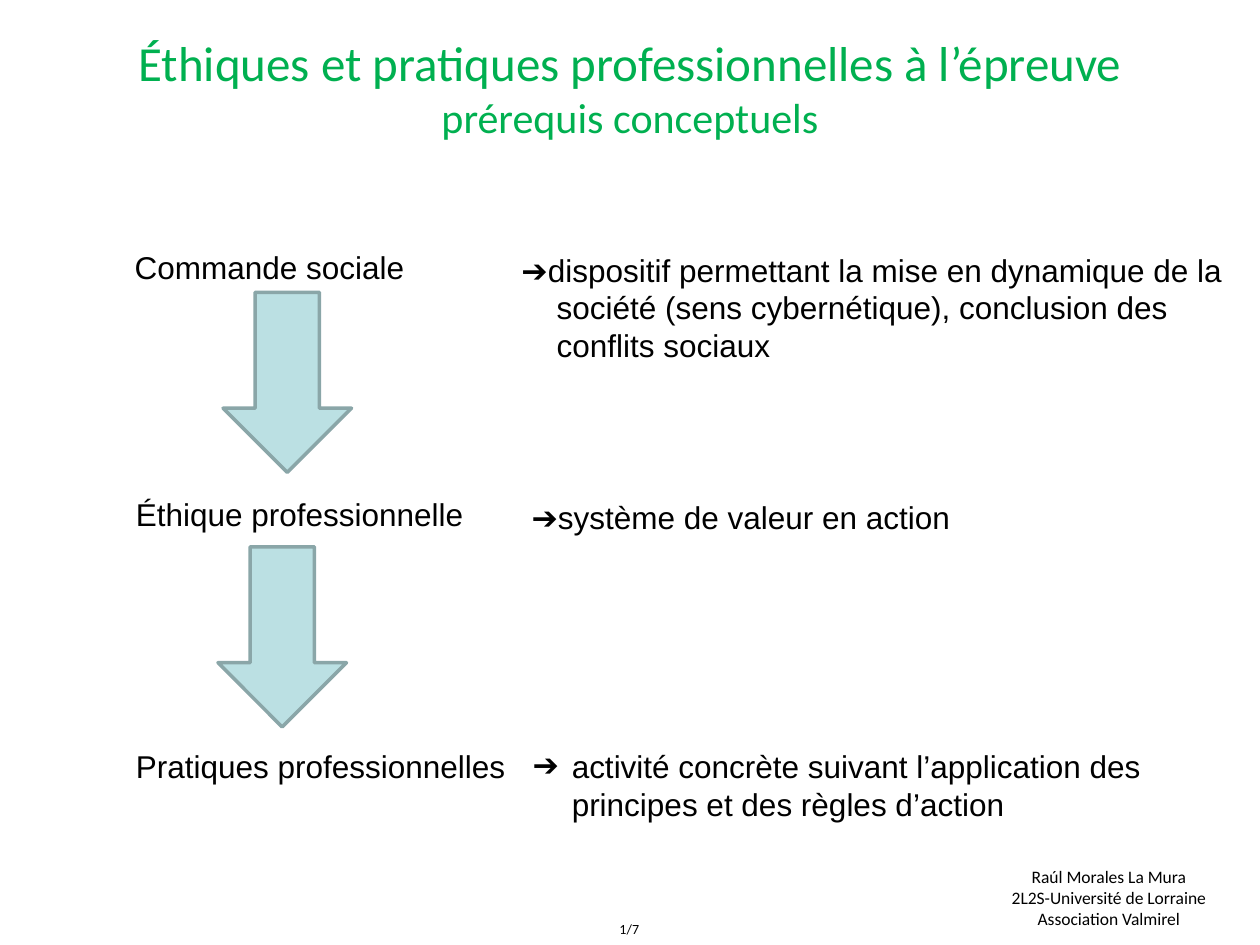
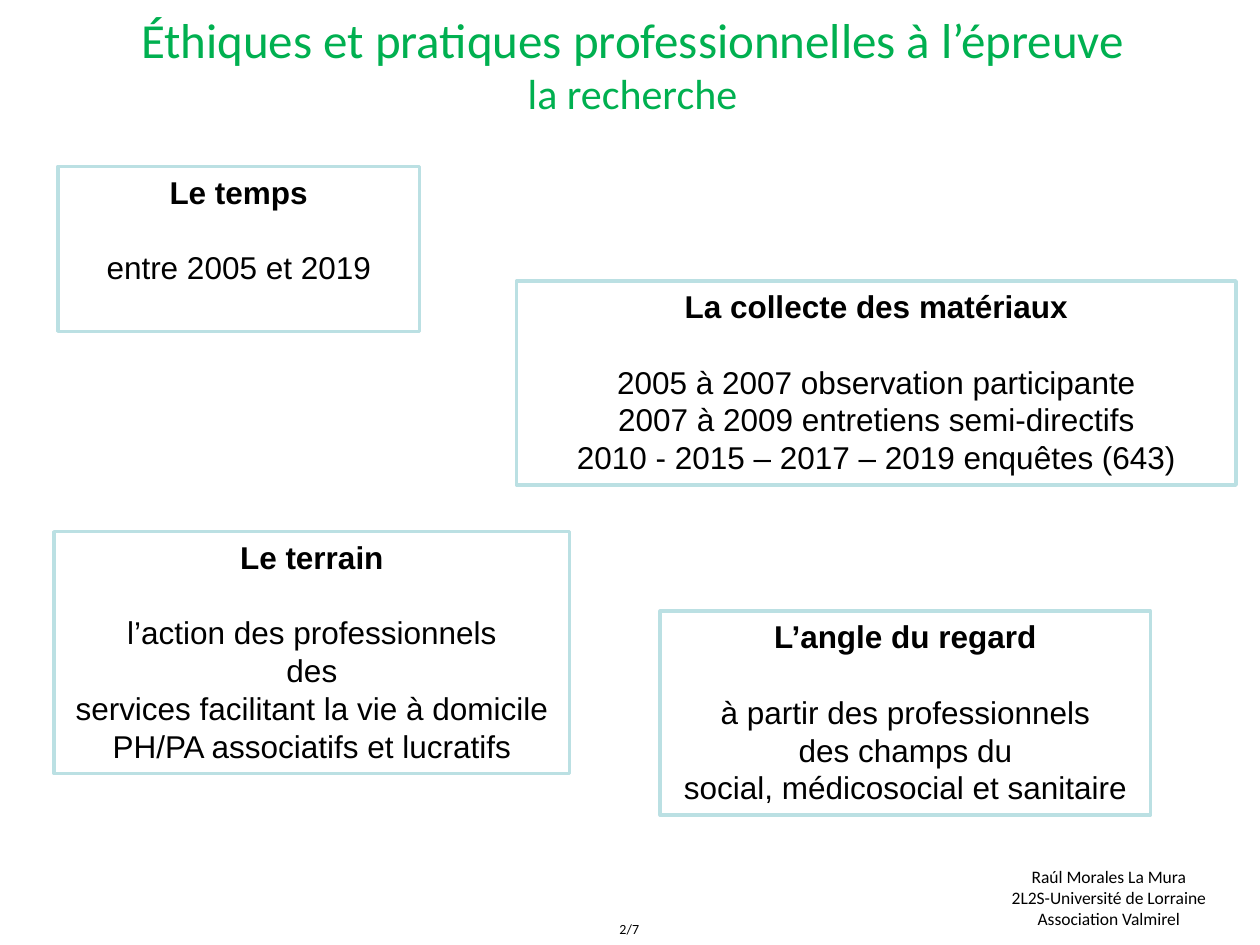
"""Build two slides on professional ethics: key concepts and the research design."""
from pptx import Presentation
from pptx.dml.color import RGBColor
from pptx.enum.shapes import MSO_SHAPE
from pptx.enum.text import MSO_ANCHOR, PP_ALIGN
from pptx.oxml.ns import qn
from pptx.util import Inches, Pt
from lxml.etree import SubElement

GREEN = RGBColor(0x00, 0xB0, 0x50)
BLACK = RGBColor(0x00, 0x00, 0x00)
WHITE = RGBColor(0xFF, 0xFF, 0xFF)
PALE_BLUE = RGBColor(0xBB, 0xE0, 0xE3)
GREY_BLUE = RGBColor(0x8A, 0xA6, 0xA8)

MAIN_TITLE = "Éthiques et pratiques professionnelles à l’épreuve"
AUTHOR = "Raúl Morales La Mura\n2L2S-Université de Lorraine\nAssociation Valmirel"
PAGE_COUNT = 7


def write_text(shape, text, size, font="Arial", color=BLACK, align=PP_ALIGN.LEFT):
    """Fill a shape with wrapped paragraphs in one style and return them."""
    text_frame = shape.text_frame
    text_frame.text = text
    text_frame.word_wrap = True
    for paragraph in text_frame.paragraphs:
        paragraph.alignment = align
        for run in paragraph.runs:
            run.font.name = font
            run.font.size = Pt(size)
            run.font.color.rgb = color
    return text_frame.paragraphs


def add_block(slide, preset, box, fill, line):
    """Add a flat preset shape with a 2 pt outline."""
    shape = slide.shapes.add_shape(preset, *map(Inches, box))
    shape.shadow.inherit = False
    shape.fill.solid()
    shape.fill.fore_color.rgb = fill
    shape.line.color.rgb = line
    shape.line.width = Pt(2)
    return shape


presentation = Presentation()
presentation.slide_width = Inches(10)
presentation.slide_height = Inches(7.5)

headers = [
    ("prérequis conceptuels", (0.1, 0.03, 9.8, 1.33)),
    ("la recherche", (0.12, -0.03, 9.8, 1.07)),
]
for number, (subtitle, box) in enumerate(headers, start=1):
    slide = presentation.slides.add_slide(presentation.slide_layouts[5])
    title = slide.shapes.title
    title.left, title.top, title.width, title.height = map(Inches, box)
    title.text_frame.vertical_anchor = MSO_ANCHOR.MIDDLE
    lines = write_text(title, f"{MAIN_TITLE}\n{subtitle}", 28, "Calibri", GREEN, PP_ALIGN.CENTER)
    lines[1].runs[0].font.size = Pt(24)

    footers = [
        (AUTHOR, 10, (7.6, 6.82, 2.4, 0.61)),
        (f"{number}/{PAGE_COUNT}", 8, (4.76, 7.26, 0.47, 0.24)),
    ]
    for text, size, box in footers:
        footer = slide.shapes.add_textbox(*map(Inches, box))
        write_text(footer, text, size, "Calibri", align=PP_ALIGN.CENTER)

concept_slide, research_slide = presentation.slides

concepts = [
    ("Commande sociale", (0.97, 1.92, 2.47, 0.4)),
    ("Éthique professionnelle", (0.98, 3.88, 3.07, 0.4)),
    ("Pratiques professionnelles", (0.98, 5.88, 3.54, 0.4)),
]
for text, box in concepts:
    label = concept_slide.shapes.add_textbox(*map(Inches, box))
    write_text(label, text, 18)

definitions = [
    ("➔dispositif permettant la mise en dynamique de la société "
     "(sens cybernétique), conclusion des conflits sociaux", (4.04, 1.94, 5.86, 1.01), 0.28),
    ("➔système de valeur en action", (4.12, 3.9, 5.78, 0.4), 0.28),
    ("activité concrète suivant l’application des principes et des règles d’action",
     (4.13, 5.88, 5.77, 0.71), 0.31),
]
for text, box, indent in definitions:
    definition = concept_slide.shapes.add_textbox(*map(Inches, box))
    paragraph = write_text(definition, text, 18)[0]
    properties = paragraph._p.get_or_add_pPr()
    properties.set("marL", str(Inches(indent)))
    properties.set("indent", str(-Inches(indent)))
    if not text.startswith("➔"):
        SubElement(properties, qn("a:buFont")).set("typeface", "Arial")
        SubElement(properties, qn("a:buChar")).set("char", "➔")

for left, top in [(1.77, 2.32), (1.73, 4.34)]:
    add_block(concept_slide, MSO_SHAPE.DOWN_ARROW, (left, top, 1.02, 1.43), PALE_BLUE, GREY_BLUE)

research_boxes = [
    ("Le temps\nentre 2005 et 2019", (0.46, 1.32, 2.87, 1.31)),
    ("La collecte des matériaux\n2005 à 2007 observation participante\n"
     "2007 à 2009 entretiens semi-directifs\n"
     "2010 - 2015 – 2017 – 2019 enquêtes (643)", (4.1, 2.23, 5.71, 1.62)),
    ("Le terrain\nl’action des professionnels\ndes\n"
     "services facilitant la vie à domicile PH/PA associatifs et lucratifs",
     (0.43, 4.22, 4.09, 1.92)),
    ("L’angle du regard\nà partir des professionnels\ndes champs du\n"
     "social, médicosocial et sanitaire", (5.24, 4.85, 3.89, 1.62)),
]
for text, box in research_boxes:
    panel = add_block(research_slide, MSO_SHAPE.RECTANGLE, box, WHITE, PALE_BLUE)
    panel.text_frame.vertical_anchor = MSO_ANCHOR.TOP
    heading = write_text(panel, text, 18, align=PP_ALIGN.CENTER)[0]
    heading.runs[0].font.bold = True
    heading.space_after = Pt(21.5)

presentation.save("out.pptx")
